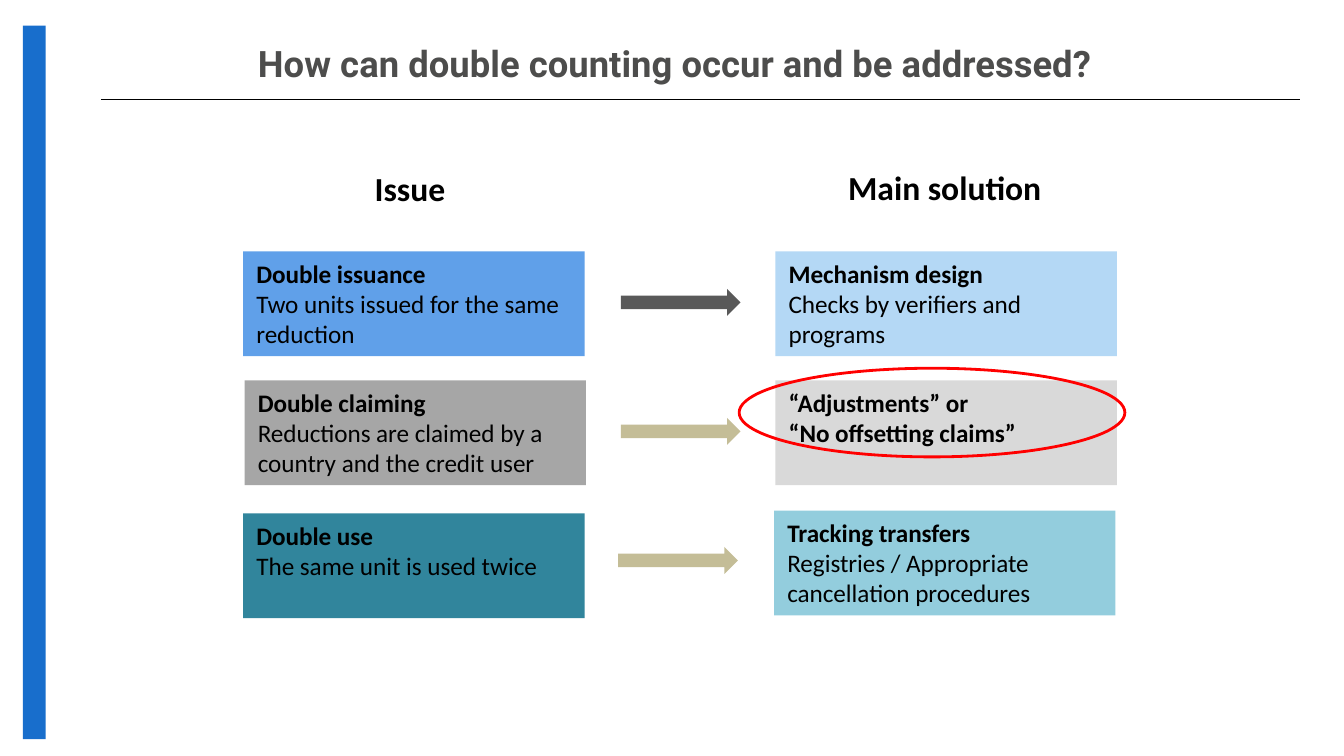
import pptx
import pptx.util
import pptx.dml.color
from pptx.enum.shapes import MSO_CONNECTOR, MSO_SHAPE
from pptx.enum.text import MSO_ANCHOR, PP_ALIGN
from pptx.oxml.xmlchemy import OxmlElement

TITLE = "How can double counting occur and be addressed?"
# Each heading: text, left, top, width
HEADINGS = [("Issue", 2.34, 1.2, 1.42), ("Main solution", 5.76, 1.19, 2.54)]
# Each box: left, top, fill, heading, text, text is bold
BOXES = [
    (1.81, 1.87, "60A0E9", "Double issuance", "Two units issued for the same reduction", False),
    (1.82, 2.83, "A6A6A6", "Double claiming",
     "Reductions are claimed by a country and the credit user", False),
    (1.81, 3.82, "31859C", "Double use", "The same unit is used twice", False),
    (5.77, 1.87, "B4D8F5", "Mechanism design", "Checks by verifiers and programs", False),
    (5.77, 2.83, "D9D9D9", "“Adjustments” or", "“No offsetting claims”", True),
    (5.76, 3.8, "93CDDD", "Tracking transfers",
     "Registries / Appropriate cancellation procedures", False),
]
# Each arrow: left, fill
ARROWS = [(4.62, "595959"), (4.62, "C4BD97"), (4.6, "C4BD97")]

SLIDE_W = 10
SLIDE_H = SLIDE_W * 9 / 16
BOX_W, BOX_H = 2.54, 0.78
HEADING_H = 0.4
ARROW_TOP, ARROW_PITCH = 2.15, 0.96
ARROW_W, ARROW_H = 0.89, 0.2
RULE_Y = 0.74


def inches(*lengths):
    return [pptx.util.Inches(n) for n in lengths]


def rgb(value):
    return pptx.dml.color.RGBColor.from_string(value)


def add_shape(kind, box, fill=None, line=None):
    s = slide.shapes.add_shape(kind, *inches(*box))
    s.shadow.inherit = False
    if fill:
        s.fill.solid()
        s.fill.fore_color.rgb = rgb(fill)
    else:
        s.fill.background()
    if line:
        s.line.color.rgb = rgb(line)
        s.line.width = pptx.util.Pt(1.5)
    else:
        s.line.fill.background()
    return s


def write(s, lines, size, font="Calibri", color="000000",
          align=PP_ALIGN.LEFT, anchor=MSO_ANCHOR.TOP):
    """Write (text, bold) pairs, one paragraph each."""
    tf = s.text_frame
    tf.word_wrap = True
    tf.vertical_anchor = anchor
    for i, (text, bold) in enumerate(lines):
        p = tf.add_paragraph() if i else tf.paragraphs[0]
        p.alignment = align
        r = p.add_run()
        r.text = text
        r.font.name = font
        r.font.size = pptx.util.Pt(size)
        r.font.bold = bold
        r.font.color.rgb = rgb(color)


prs = pptx.Presentation()
prs.slide_width, prs.slide_height = inches(SLIDE_W, SLIDE_H)
slide = prs.slides.add_slide(prs.slide_layouts[6])

rule = slide.shapes.add_connector(MSO_CONNECTOR.STRAIGHT, *inches(0.75, RULE_Y, 9.67, RULE_Y))
rule.line.color.rgb = rgb("000000")
rule.line.width = pptx.util.Pt(0.75)
rule._element.spPr.append(OxmlElement("a:effectLst"))

add_shape(MSO_SHAPE.RECTANGLE, (0.17, 0.19, 0.17, 5.31), "186ECC")

title = slide.shapes.add_textbox(*inches(1.81, 0.19, 6.94, 0.56))
title.text_frame.margin_left = pptx.util.Inches(0.11)
write(title, [(TITLE, True)], 19.5, "Roboto", "4D4D4C", anchor=MSO_ANCHOR.MIDDLE)

for left, top, fill, heading, text, bold in BOXES:
    s = add_shape(MSO_SHAPE.RECTANGLE, (left, top, BOX_W, BOX_H), fill)
    write(s, [(heading, True), (text, bold)], 13.5)

for heading, left, top, width in HEADINGS:
    s = slide.shapes.add_textbox(*inches(left, top, width, HEADING_H))
    write(s, [(heading, True)], 18, align=PP_ALIGN.CENTER)

for row, (left, fill) in enumerate(ARROWS):
    top = ARROW_TOP + row * ARROW_PITCH
    add_shape(MSO_SHAPE.RIGHT_ARROW, (left, top, ARROW_W, ARROW_H), fill)

add_shape(MSO_SHAPE.OVAL, (5.5, 2.74, 2.87, 0.66), line="FF0000")

prs.save("out.pptx")
